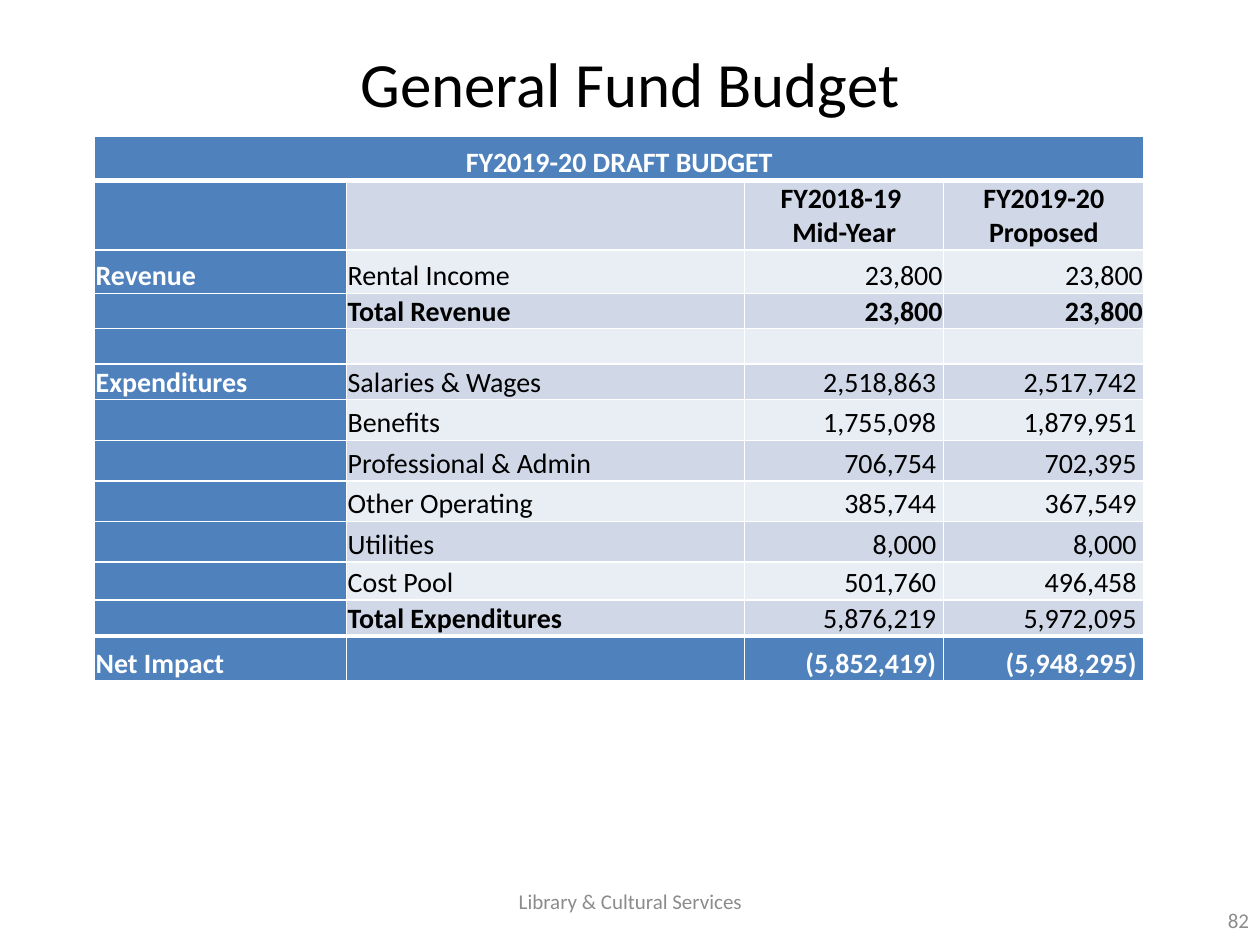
from lxml import etree
from pptx import Presentation
from pptx.dml.color import RGBColor
from pptx.enum.text import MSO_ANCHOR, PP_ALIGN
from pptx.oxml.ns import qn
from pptx.util import Pt

LEFT, CENTER, RIGHT = PP_ALIGN.LEFT, PP_ALIGN.CENTER, PP_ALIGN.RIGHT
MIDDLE, BOTTOM = MSO_ANCHOR.MIDDLE, MSO_ANCHOR.BOTTOM
WHITE = RGBColor(0xFF, 0xFF, 0xFF)
BLACK = RGBColor(0x00, 0x00, 0x00)
GRAY = RGBColor(0x8C, 0x8C, 0x8C)
BLUE = RGBColor(0x4F, 0x81, 0xBD)
BAND_DARK = RGBColor(0xD0, 0xD8, 0xE8)
BAND_LIGHT = RGBColor(0xE9, 0xED, 0xF4)
FONT = "Calibri"

CAPTIONS = [
    ("General Fund Budget", (36, 21.6, 648, 50.4), 36, BLACK, CENTER),
    ("82", (661, 511.2, 59.8, 28.8), 12, GRAY, RIGHT),
    ("Library & Cultural Services", (246.2, 500.4, 228.2, 28.8), 12, GRAY, CENTER),
]

BUDGET = [
    ("FY2019-20 DRAFT BUDGET", "", "", ""),
    ("", "", "FY2018-19 \nMid-Year", "FY2019-20 Proposed"),
    ("Revenue", "Rental Income", "23,800", "23,800"),
    ("", "Total Revenue", "23,800", "23,800"),
    ("", "", "", ""),
    ("Expenditures", "Salaries & Wages", "2,518,863 ", "2,517,742 "),
    ("", "Benefits", "1,755,098 ", "1,879,951 "),
    ("", "Professional & Admin", "706,754 ", "702,395 "),
    ("", "Other Operating", "385,744 ", "367,549 "),
    ("", "Utilities", "8,000 ", "8,000 "),
    ("", "Cost Pool", "501,760 ", "496,458 "),
    ("", "Total Expenditures", "5,876,219 ", "5,972,095 "),
    ("Net Impact", "", "(5,852,419) ", "(5,948,295) "),
]
COLUMN_WIDTHS = [144, 227.5, 113.8, 114.5]
ROW_HEIGHTS = [25, 39.5, 24.8, 20.2, 20.2, 20.2, 23.2, 23.2, 23.2, 23.2, 21.7, 20.7, 25.7]
TABLE_LEFT, TABLE_TOP = 54, 78
TITLE_ROW, HEADING_ROW, NET_ROW = 0, 1, len(BUDGET) - 1
BOLD_ROWS = {TITLE_ROW, HEADING_ROW, 3, NET_ROW}
TOTAL_EXPENDITURES = (11, 1)


def write(frame, text, size=16, color=BLACK, bold=False, align=LEFT):
    for index, line in enumerate(text.split("\n")):
        paragraph = frame.paragraphs[0] if index == 0 else frame.add_paragraph()
        paragraph.alignment = align
        if line:
            run = paragraph.add_run()
            run.text = line
            run.font.name = FONT
            run.font.size = Pt(size)
            run.font.bold = bold
            run.font.color.rgb = color
        else:
            etree.SubElement(paragraph._p, qn("a:endParaRPr"), sz=str(size * 100))


def add_borders(cell, top, bottom):
    properties = cell._tc.get_or_add_tcPr()
    for side, width in (("L", 1), ("R", 1), ("T", top), ("B", bottom)):
        line = etree.SubElement(properties, qn("a:ln" + side), w=str(Pt(width)))
        fill = etree.SubElement(line, qn("a:solidFill"))
        etree.SubElement(fill, qn("a:srgbClr"), val=str(WHITE))


def format_cell(cell, row, column, text):
    accent = row in (TITLE_ROW, NET_ROW) or column == 0
    if row in (TITLE_ROW, HEADING_ROW):
        align = CENTER
    else:
        align = RIGHT if column > 1 else LEFT
    cell.margin_left = cell.margin_right = cell.margin_top = Pt(0.7)
    cell.margin_bottom = Pt(0)
    cell.vertical_anchor = BOTTOM
    add_borders(
        cell,
        top=3 if row in (HEADING_ROW, NET_ROW) else 1,
        bottom=3 if row in (TITLE_ROW, NET_ROW - 1) else 1,
    )
    cell.fill.solid()
    cell.fill.fore_color.rgb = BLUE if accent else BAND_DARK if row % 2 else BAND_LIGHT
    write(
        cell.text_frame,
        text,
        color=WHITE if accent else BLACK,
        bold=column == 0 or row in BOLD_ROWS or (row, column) == TOTAL_EXPENDITURES,
        align=align,
    )


def add_budget(slide):
    table = slide.shapes.add_table(
        len(BUDGET), len(COLUMN_WIDTHS), Pt(TABLE_LEFT), Pt(TABLE_TOP),
        Pt(sum(COLUMN_WIDTHS)), Pt(sum(ROW_HEIGHTS)),
    ).table
    table.horz_banding = False
    for column, width in zip(table.columns, COLUMN_WIDTHS):
        column.width = Pt(width)
    for row, (height, texts) in enumerate(zip(ROW_HEIGHTS, BUDGET)):
        table.rows[row].height = Pt(height)
        for column, text in enumerate(texts):
            format_cell(table.cell(row, column), row, column, text)
    table.cell(TITLE_ROW, 0).merge(table.cell(TITLE_ROW, len(COLUMN_WIDTHS) - 1))


def main():
    deck = Presentation()
    deck.slide_width, deck.slide_height = Pt(720), Pt(540)
    slide = deck.slides.add_slide(deck.slide_layouts[6])
    add_budget(slide)
    for text, place, size, color, align in CAPTIONS:
        frame = slide.shapes.add_textbox(*map(Pt, place)).text_frame
        frame.word_wrap = True
        frame.vertical_anchor = MIDDLE
        write(frame, text, size=size, color=color, align=align)
    deck.save("out.pptx")


if __name__ == "__main__":
    main()
